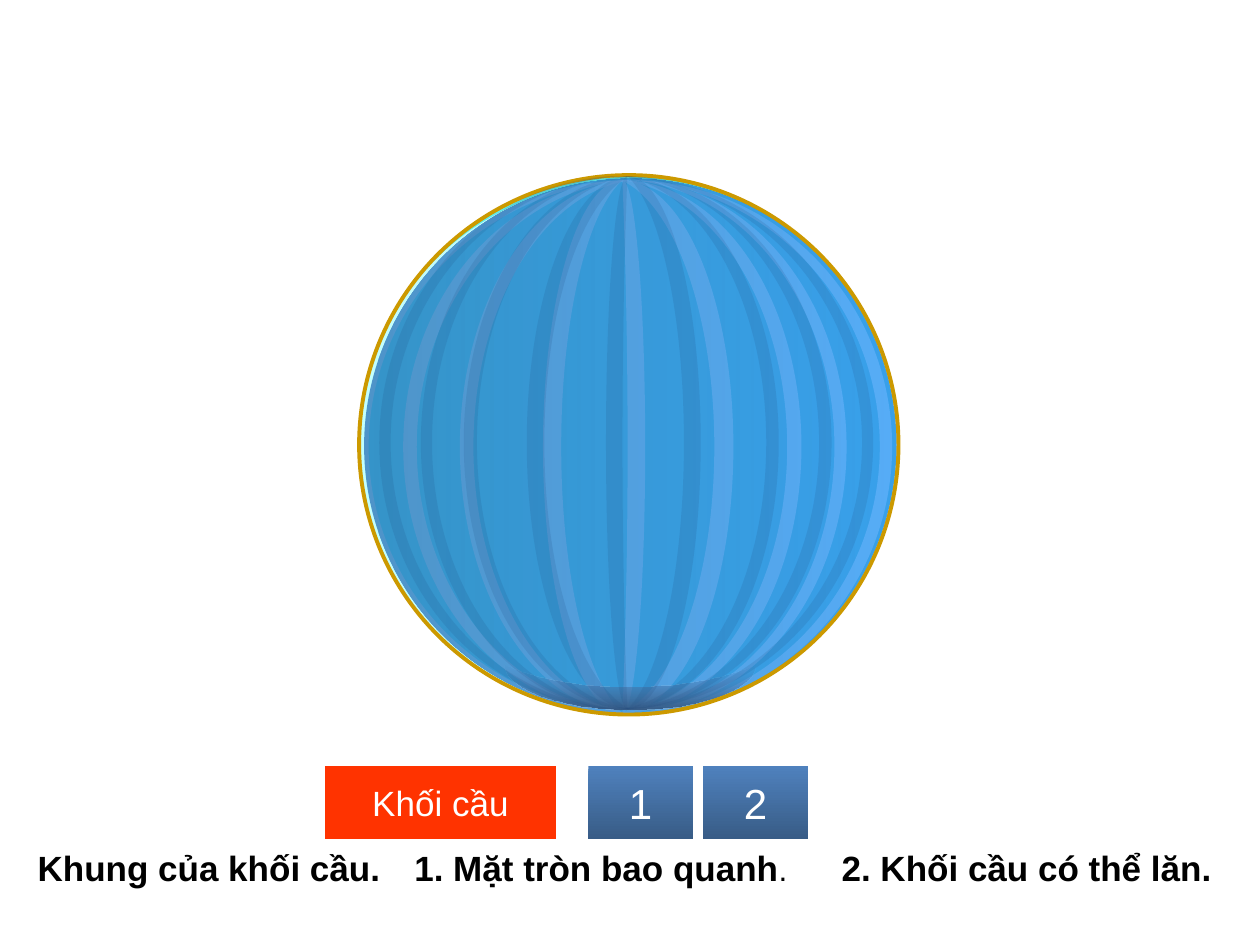
"""Build a slide showing a striped sphere, its buttons and their captions."""
from dataclasses import dataclass

from lxml import etree
from pptx import Presentation
from pptx.dml.color import RGBColor
from pptx.enum import shapes, text
from pptx.oxml.ns import qn
from pptx.util import Pt


@dataclass(frozen=True)
class Theme:
    font: str = "Arial"
    white: str = "FFFFFF"
    black: str = "000000"
    aqua: str = "66FFFF"
    sky: str = "3399FF"
    blue: str = "4F81BD"
    navy: str = "1F497D"
    gold: str = "CC9900"
    red: str = "FF3300"
    number_size: int = 24
    body_size: int = 20
    stop_size: int = 18


theme = Theme()
DARK = 46


def paint(shape, stops, angle=0):
    shape.shadow.inherit = False
    shape.line.fill.background()
    if len(stops) == 1:
        shape.fill.solid()
        targets = [shape.fill]
    else:
        shape.fill.gradient()
        shape.fill.gradient_angle = angle
        targets = shape.fill.gradient_stops
    for target, (color, _, _) in zip(targets, stops):
        color_format = target.fore_color if len(stops) == 1 else target.color
        color_format.rgb = RGBColor.from_string(color)
    colors = shape._element.spPr.iter(qn("a:srgbClr"))
    for node, (_, shade, alpha) in zip(colors, stops):
        for tag, percent in (("a:shade", shade), ("a:alpha", alpha)):
            if percent < 100:
                etree.SubElement(node, qn(tag)).set("val", str(percent * 1000))


def style(span, size, color, bold=False):
    span.font.name = theme.font
    span.font.size = Pt(size)
    span.font.bold = bold
    span.font.color.rgb = RGBColor.from_string(color)


deck = Presentation()
deck.slide_width, deck.slide_height = Pt(720), Pt(540)
page = deck.slides.add_slide(deck.slide_layouts[6])
OVAL, MOON = shapes.MSO_SHAPE.OVAL, shapes.MSO_SHAPE.MOON

curves = [0.047, 0.044, 0.056, 0.06, 0.079, 0.079, 0.17, 0.229, 0.771]
white_stripes = [(360, 149.8), (203.8, 156.2), (360, 123.8), (230.4, 128.9),
                 (355, 103), (262.8, 97.9), (355, 64.1), (310.3, 45.4),
                 (355.7, 13)]
navy_stripes = [(216.7, 138.2), (355, 144), (240.5, 113.8), (356.4, 118.8),
                (265, 95), (355, 90), (301, 59), (358.6, 41.8), (346.3, 12.2)]
stripe_sets = [(white_stripes, 103, theme.white, 60, 0),
               (navy_stripes, 100.6, theme.navy, 15, 1)]

base = page.shapes.add_shape(OVAL, Pt(205.2), Pt(100.8), Pt(306.7), Pt(306.7))
paint(base, [(theme.aqua, 100, 100), (theme.aqua, DARK, 100)])

for stripes, top, color, alpha, first_flipped in stripe_sets:
    if color == theme.navy:
        ball = page.shapes.add_shape(OVAL, Pt(208.1), Pt(102.2), Pt(305.3), Pt(305.3))
        paint(ball, [(theme.sky, DARK, 73), (theme.sky, 100, 73)])
        shadow = page.shapes.add_shape(MOON, Pt(347), Pt(321.1), Pt(25.9), Pt(143.3))
        shadow.rotation = 270
        paint(shadow, [(theme.blue, DARK, 100), (theme.blue, 100, 0)])
        ring = page.shapes.add_shape(OVAL, Pt(205.2), Pt(100.1), Pt(308.2), Pt(308.2))
        ring.shadow.inherit = False
        ring.fill.background()
        ring.line.color.rgb = RGBColor.from_string(theme.gold)
        ring.line.width = Pt(2.25)
    group = page.shapes.add_group_shape()
    for index, ((left, width), curve) in enumerate(zip(stripes, curves)):
        stripe = group.shapes.add_shape(MOON, Pt(left), Pt(top), Pt(width), Pt(304.6))
        stripe.adjustments[0] = curve
        if index % 2 == first_flipped:
            stripe._element.spPr.find(qn("a:xfrm")).set("flipH", "1")
        paint(stripe, [(color, 100, alpha)])

number_fill = [(theme.blue, 100, 100), (theme.blue, DARK, 100)]
buttons = [("1", 336.2, 59.8, theme.number_size, number_fill),
           ("2", 401.8, 59.8, theme.number_size, number_fill),
           ("Khối cầu", 185.8, 131.8, theme.body_size, [(theme.red, 100, 100)])]
for label, left, width, size, stops in buttons:
    button = page.shapes.add_shape(shapes.MSO_SHAPE.ACTION_BUTTON_CUSTOM,
                                   Pt(left), Pt(437.8), Pt(width), Pt(41.8))
    paint(button, stops, 270)
    frame = button.text_frame
    frame.text = label
    frame.word_wrap = False
    frame.vertical_anchor = text.MSO_ANCHOR.MIDDLE
    para = frame.paragraphs[0]
    para.alignment = text.PP_ALIGN.CENTER
    style(para.runs[0], size, theme.white)

captions = [("Khung của khối cầu.", "", 14.4, 214.6),
            ("1. Mặt tròn bao quanh", ".", 229.7, 240.5),
            ("2. Khối cầu có thể lăn.", "", 473.8, 246.2)]
for caption, ending, left, width in captions:
    box = page.shapes.add_textbox(Pt(left), Pt(480.2), Pt(width), Pt(31))
    frame = box.text_frame
    frame.text = caption
    frame.word_wrap = True
    frame.auto_size = text.MSO_AUTO_SIZE.SHAPE_TO_FIT_TEXT
    para = frame.paragraphs[0]
    style(para.runs[0], theme.body_size, theme.black, True)
    if ending:
        span = para.add_run()
        span.text = ending
        style(span, theme.stop_size, theme.black)

deck.save("out.pptx")
